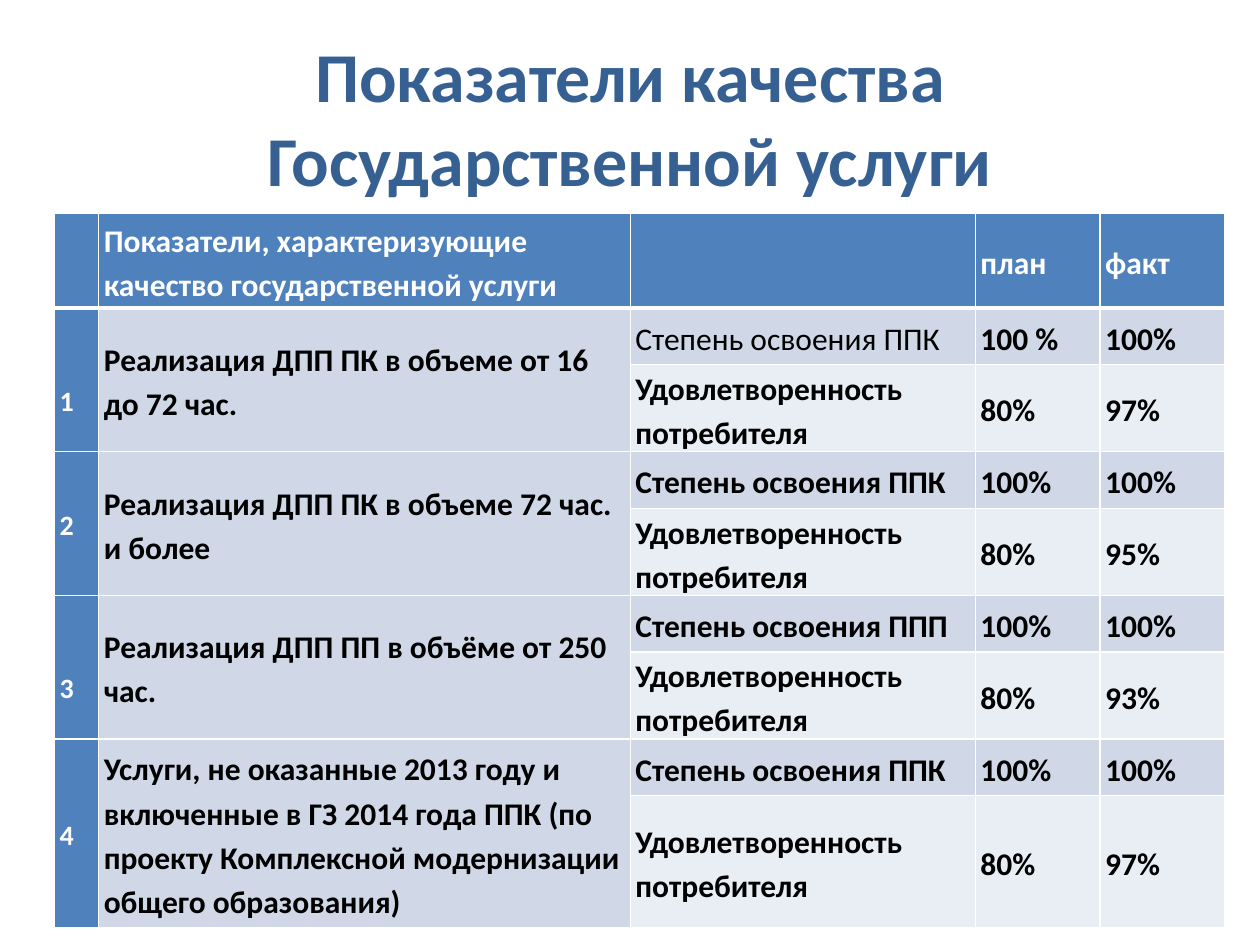
from lxml import etree
from pptx import Presentation
from pptx.dml.color import RGBColor
from pptx.enum.text import MSO_ANCHOR, PP_ALIGN
from pptx.oxml.ns import qn
from pptx.util import Pt

MIDDLE, LEFT, CENTER = MSO_ANCHOR.MIDDLE, PP_ALIGN.LEFT, PP_ALIGN.CENTER

TITLE_BLUE = RGBColor(0x37, 0x60, 0x92)
BLUE = RGBColor(0x4F, 0x81, 0xBD)
PALE = RGBColor(0xD0, 0xD8, 0xE8)
PALER = RGBColor(0xE9, 0xED, 0xF4)
WHITE = RGBColor(0xFF, 0xFF, 0xFF)
BLACK = RGBColor(0, 0, 0)

TITLE = "Показатели качества Государственной услуги"
HEADER = ["", "Показатели, характеризующие качество государственной услуги", "", "план", "факт"]
SATISFACTION = "Удовлетворенность потребителя"
# Service, mastery indicator, its plan, its actual, satisfaction actual
SERVICES = [
    ("Реализация ДПП ПК в объеме от 16 до 72 час.", "Степень освоения ППК", "100 %", "100%", "97%"),
    ("Реализация ДПП ПК в объеме 72 час. и более", "Степень освоения ППК", "100%", "100%", "95%"),
    ("Реализация ДПП ПП в объёме от 250 час.", "Степень освоения ППП", "100%", "100%", "93%"),
    ("Услуги, не оказанные 2013 году и включенные в ГЗ 2014 года ППК "
     "(по проекту Комплексной модернизации общего образования)",
     "Степень освоения ППК", "100%", "100%", "97%"),
]
SATISFACTION_PLAN = "80%"
LOWERED_NUMBERS = (1, 3)
LOWERING = 22.5

COLUMN_WIDTHS = [25.2, 303.8, 197.2, 71.3, 71.3]
ROW_HEIGHTS = [54] + [32.4] * 7 + [75.6]


def write(frame, text, size=18, color=BLACK, bold=True, align=LEFT, spacing=None):
    frame.word_wrap = True
    para = frame.paragraphs[0]
    para.alignment = align
    para.line_spacing = spacing
    span = para.add_run()
    span.text = text
    span.font.name = "Calibri"
    span.font.size = Pt(size)
    span.font.bold = bold
    span.font.color.rgb = color


def paint(cell, fill, bottom=1):
    """Give a cell its white borders and its fill."""
    properties = cell._tc.get_or_add_tcPr()
    for side, width in (("lnL", 1), ("lnR", 1), ("lnT", 1), ("lnB", bottom)):
        line = etree.SubElement(properties, qn(f"a:{side}"), w=str(Pt(width)))
        solid = etree.SubElement(line, qn("a:solidFill"))
        etree.SubElement(solid, qn("a:srgbClr"), val=str(WHITE))
    cell.fill.solid()
    cell.fill.fore_color.rgb = fill


def fill_cell(cell, text, lowering=0, **format):
    cell.vertical_anchor = MIDDLE
    cell.margin_left = cell.margin_right = Pt(2.9)
    cell.margin_top, cell.margin_bottom = Pt(lowering), 0
    if text:
        write(cell.text_frame, text, spacing=1.15, **format)


def add_title(page):
    box = page.shapes.add_textbox(Pt(36), Pt(21.6), Pt(648), Pt(90))
    box.text_frame.vertical_anchor = MIDDLE
    write(box.text_frame, TITLE, size=40, color=TITLE_BLUE, align=CENTER)


def add_indicators(page):
    frame = page.shapes.add_table(len(ROW_HEIGHTS), len(COLUMN_WIDTHS), Pt(31.2), Pt(122),
                                  Pt(sum(COLUMN_WIDTHS)), Pt(sum(ROW_HEIGHTS)))
    table = frame.table
    table.horz_banding = False
    for column, width in zip(table.columns, COLUMN_WIDTHS):
        column.width = Pt(width)
    for row, height in zip(table.rows, ROW_HEIGHTS):
        row.height = Pt(height)

    for column, text in enumerate(HEADER):
        paint(table.cell(0, column), BLUE, bottom=3)
        fill_cell(table.cell(0, column), text, color=WHITE)

    for number, (service, mastery, plan, actual, satisfied) in enumerate(SERVICES, 1):
        top = 2 * number - 1
        details = [(mastery, plan, actual), (SATISFACTION, SATISFACTION_PLAN, satisfied)]
        for row, (values, shade) in enumerate(zip(details, (PALE, PALER)), top):
            for column, fill in enumerate((BLUE, PALE, shade, shade, shade)):
                paint(table.cell(row, column), fill)
            for column, text in enumerate(values, 2):
                fill_cell(table.cell(row, column), text, bold=(row, column) != (1, 2))
        for column in (0, 1):
            table.cell(top, column).merge(table.cell(top + 1, column))
        fill_cell(table.cell(top, 0), str(number), size=16, color=WHITE,
                  lowering=LOWERING if number in LOWERED_NUMBERS else 0)
        fill_cell(table.cell(top, 1), service)


def main():
    deck = Presentation()
    deck.slide_width, deck.slide_height = Pt(720), Pt(540)
    page = deck.slides.add_slide(deck.slide_layouts[6])
    add_title(page)
    add_indicators(page)
    deck.save("out.pptx")


if __name__ == "__main__":
    main()
